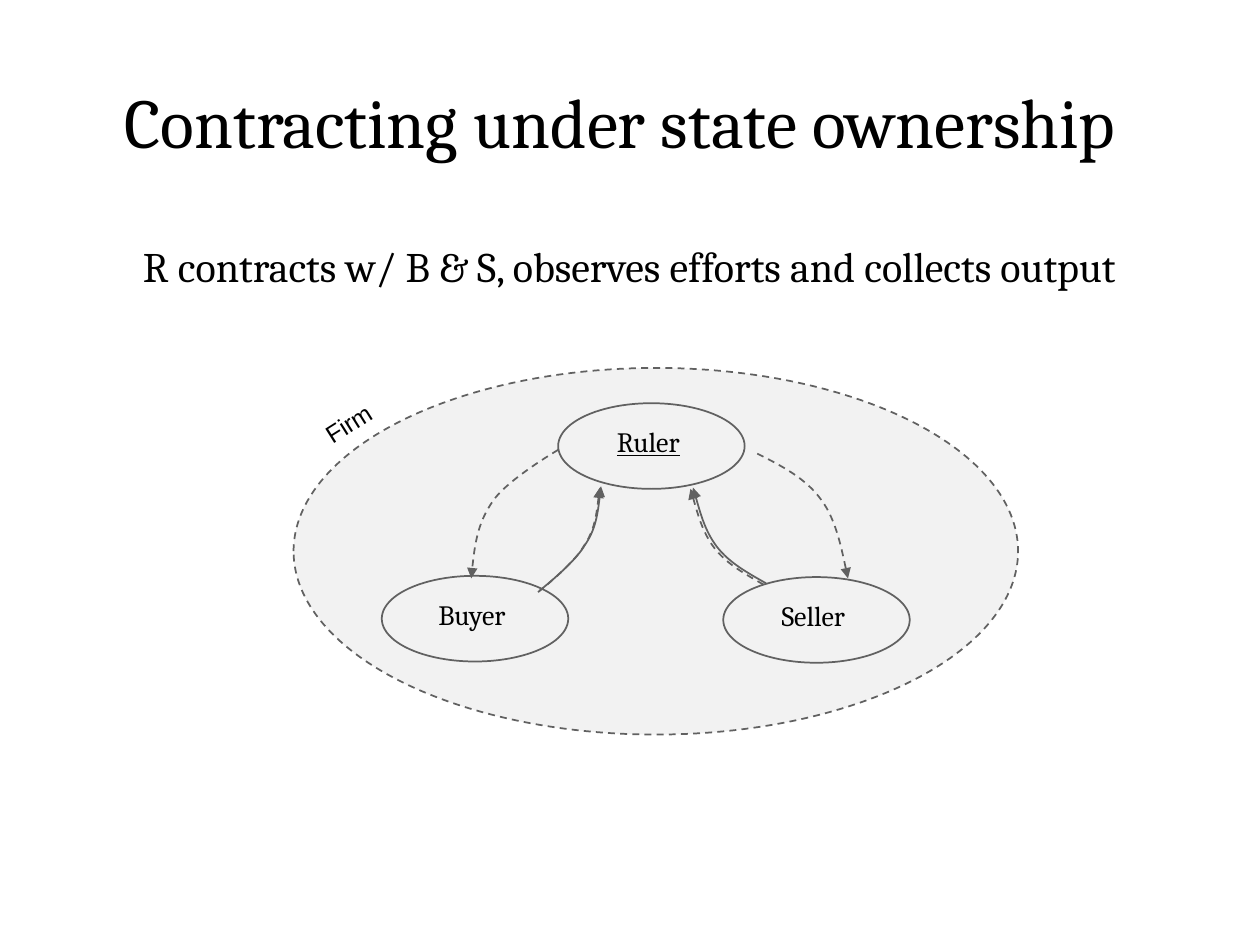
"""Build the slide on contracting under state ownership."""
from lxml.etree import SubElement
from pptx import Presentation
from pptx.dml.color import RGBColor
from pptx.enum.dml import MSO_LINE
from pptx.enum.shapes import MSO_SHAPE
from pptx.enum.text import MSO_ANCHOR, PP_ALIGN
from pptx.oxml.ns import qn
from pptx.util import Inches, Pt

COLORS = {"text": "000000", "line": "616161", "firm": "F2F2F2"}
TITLE = "Contracting under state ownership"
SUBTITLE = "R contracts w/ B & S, observes efforts and collects output"
FIRM = (2.33, 2.92, 5.75, 2.91)
PARTIES = [("Buyer", 3.03, 4.57), ("Seller", 5.74, 4.58), ("Ruler", 4.43, 3.2)]
PARTY_SIZE = (1.48, 0.68)
LABEL_SIZE = (1.25, 0.37)
LABEL_OFFSET = (0.09, 0.12)

RULER_TO_SELLER = [(6.01, 3.6), (6.21, 3.7), (6.4, 3.8), (6.52, 3.97),
                   (6.64, 4.13), (6.73, 4.59), (6.73, 4.59)]
RULER_TO_BUYER = [(4.43, 3.57), (4.43, 3.57), (4.02, 3.81), (3.91, 3.98),
                  (3.79, 4.15), (3.76, 4.37), (3.74, 4.59)]
SELLER_TO_RULER = [(6.08, 4.63), (5.94, 4.55), (5.79, 4.47), (5.69, 4.34),
                   (5.59, 4.21), (5.5, 3.87), (5.5, 3.87)]
BUYER_TO_RULER = [(4.28, 4.69), (4.28, 4.69), (4.56, 4.47), (4.64, 4.33),
                  (4.73, 4.2), (4.75, 4.03), (4.77, 3.86)]
FLOWS = [
    (RULER_TO_SELLER, True, (0, 0)),
    (RULER_TO_BUYER, True, (0, 0)),
    (SELLER_TO_RULER, False, (0, 0)),
    (BUYER_TO_RULER, False, (0, 0)),
    (SELLER_TO_RULER, True, (-0.02, 0.01)),
    (BUYER_TO_RULER, True, (-0.01, 0.01)),
]


def add_text(page, text, place, size, font="Cambria", align=PP_ALIGN.CENTER):
    box = page.shapes.add_textbox(*map(Inches, place))
    box.text_frame.word_wrap = True
    box.text_frame.text = text
    paragraph = box.text_frame.paragraphs[0]
    paragraph.alignment = align
    span = paragraph.runs[0]
    span.font.size = Pt(size)
    span.font.name = font
    span.font.color.rgb = RGBColor.from_string(COLORS["text"])
    return box


def style_outline(shape, dashed, fill=None):
    shape.shadow.inherit = False
    if fill:
        shape.fill.solid()
        shape.fill.fore_color.rgb = RGBColor.from_string(fill)
    else:
        shape.fill.background()
    shape.line.color.rgb = RGBColor.from_string(COLORS["line"])
    shape.line.width = Pt(1)
    if dashed:
        shape.line.dash_style = MSO_LINE.DASH


def add_ellipse(page, place, dashed=False, fill=None):
    ellipse = page.shapes.add_shape(MSO_SHAPE.OVAL, *map(Inches, place))
    style_outline(ellipse, dashed, fill)


def bend(shape):
    outline = next(shape.element.iter(qn("a:path")))
    segments = outline.findall(qn("a:lnTo"))
    for first in range(0, len(segments), 3):
        curve = SubElement(outline, qn("a:cubicBezTo"))
        for segment in segments[first:first + 3]:
            curve.append(segment[0])
            outline.remove(segment)


def add_flow(page, controls, dashed, shift):
    points = [(Inches(x + shift[0]), Inches(y + shift[1])) for x, y in controls]
    builder = page.shapes.build_freeform(*points[0])
    builder.add_line_segments(points[1:], close=False)
    flow = builder.convert_to_shape()
    bend(flow)
    style_outline(flow, dashed)
    SubElement(flow.line._get_or_add_ln(), qn("a:tailEnd"), type="triangle")


def main():
    deck = Presentation()
    deck.slide_width, deck.slide_height = Inches(10), Inches(7.5)
    page = deck.slides.add_slide(deck.slide_layouts[6])

    title = add_text(page, TITLE, (0.42, 0.33, 9, 1.25), 40)
    title.text_frame.vertical_anchor = MSO_ANCHOR.MIDDLE
    subtitle = add_text(page, SUBTITLE, (0.16, 1.75, 9.67, 5.25), 24)
    subtitle.text_frame.margin_top = Inches(0.2)
    subtitle.text_frame.paragraphs[0].line_spacing = 0.9

    add_ellipse(page, FIRM, dashed=True, fill=COLORS["firm"])
    for name, left, top in PARTIES:
        add_ellipse(page, (left, top, *PARTY_SIZE))
        place = (left + LABEL_OFFSET[0], top + LABEL_OFFSET[1], *LABEL_SIZE)
        label = add_text(page, name, place, 16)
        if name == "Ruler":
            label.text_frame.paragraphs[0].runs[0].font.underline = True

    firm = add_text(page, "Firm", (2.47, 3.18, 0.63, 0.34), 14, "Arial", PP_ALIGN.LEFT)
    firm.text_frame.word_wrap = False
    firm.rotation = 327.9

    for flow in FLOWS:
        add_flow(page, *flow)
    deck.save("out.pptx")


if __name__ == "__main__":
    main()
